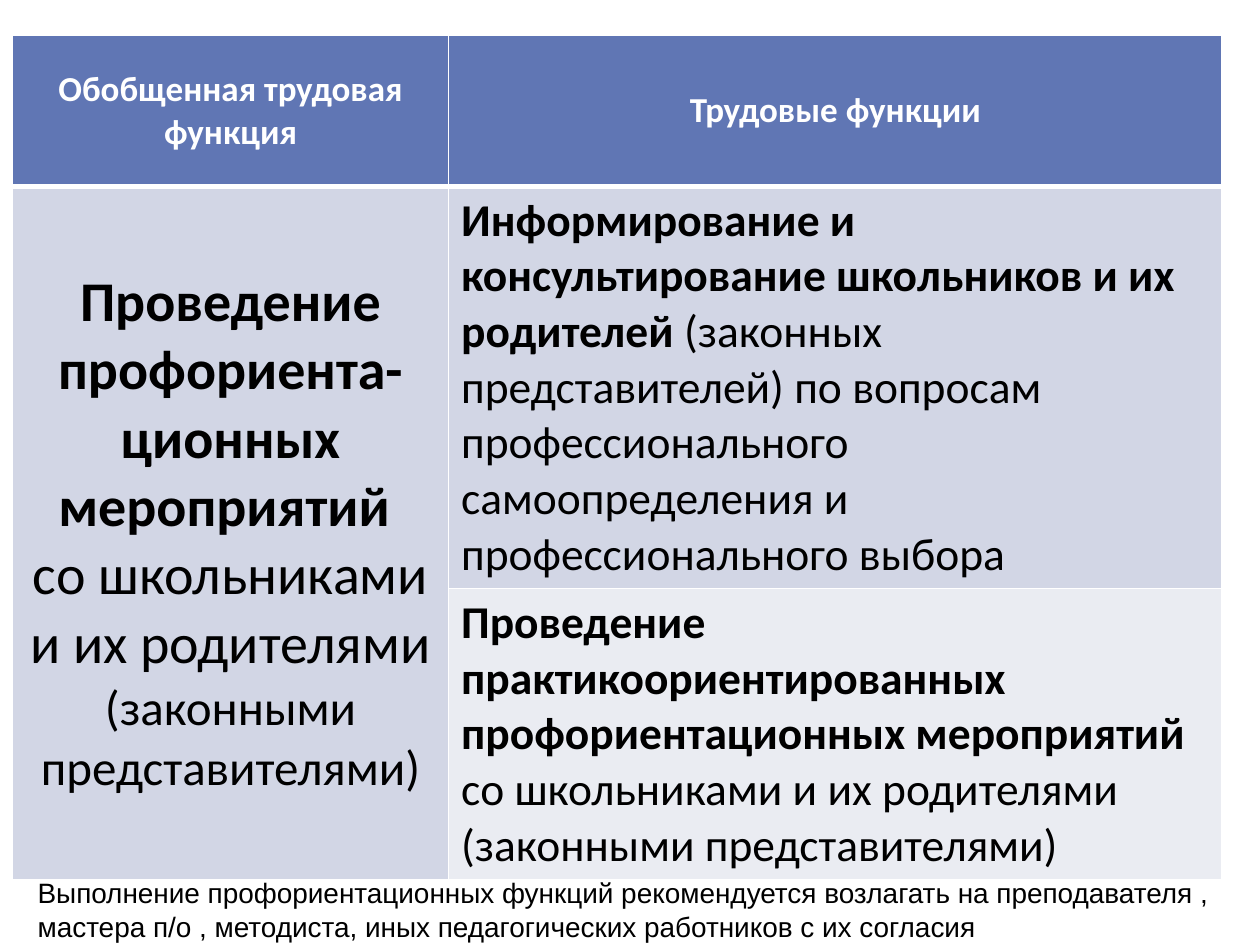
"""Build a slide with a table of labour functions and a note below it."""
from lxml import etree
from pptx import Presentation
from pptx.dml.color import RGBColor
from pptx.enum.text import MSO_ANCHOR, MSO_AUTO_SIZE, PP_ALIGN
from pptx.oxml.ns import qn
from pptx.util import Inches, Pt

CENTER, LEFT = PP_ALIGN.CENTER, PP_ALIGN.LEFT
MIDDLE, TOP = MSO_ANCHOR.MIDDLE, MSO_ANCHOR.TOP
GROW = MSO_AUTO_SIZE.SHAPE_TO_FIT_TEXT

COLORS = {"header": "6076B4", "band": "D2D6E5", "light": "EAECF2",
          "white": "FFFFFF", "black": "000000"}
COLUMNS = [3.46, 6.14]
ROWS = [1.2, 3.18, 2.3]
THIN, THICK = 1, 3

HEADERS = ["Обобщенная трудовая функция", "Трудовые функции"]
GENERAL_FUNCTION = [
    [("Проведение профориента-ционных мероприятий ", 32, True)],
    [("со школьниками и их родителями ", 32, False),
     ("(законными представителями)", 28, False)],
]
FUNCTIONS = [
    [[("Информирование и консультирование школьников и их родителей", 26, True),
      (" (законных представителей) по вопросам профессионального "
       "самоопределения и профессионального выбора", 26, False)]],
    [[("Проведение практикоориентированных профориентационных мероприятий ", 26, True),
      ("со школьниками и их родителями (законными представителями)", 26, False)]],
]
NOTE = [[("Выполнение профориентационных функций рекомендуется возлагать на "
          "преподавателя , мастера п/о , методиста, иных педагогических "
          "работников с их согласия", 16, False)]]


def write(frame, paragraphs, color, align=LEFT, font="Calibri"):
    for index, spans in enumerate(paragraphs):
        para = frame.paragraphs[0] if index == 0 else frame.add_paragraph()
        para.alignment = align
        for text, size, bold in spans:
            span = para.add_run()
            span.text = text
            span.font.name = font
            span.font.size = Pt(size)
            span.font.bold = bold
            span.font.color.rgb = RGBColor.from_string(COLORS[color])


def set_borders(cell, top, bottom):
    properties = cell._tc.get_or_add_tcPr()
    widths = {"a:lnL": THIN, "a:lnR": THIN, "a:lnT": top, "a:lnB": bottom}
    for index, (tag, width) in enumerate(widths.items()):
        line = etree.Element(qn(tag), w=str(Pt(width)))
        fill = etree.SubElement(line, qn("a:solidFill"))
        etree.SubElement(fill, qn("a:srgbClr"), val=COLORS["white"])
        properties.insert(index, line)


def style_cell(cell, fill, row):
    cell.fill.solid()
    cell.fill.fore_color.rgb = RGBColor.from_string(COLORS[fill])
    set_borders(cell, THICK if row == 1 else THIN, THICK if row == 0 else THIN)


def add_functions_table(page):
    table = page.shapes.add_table(
        len(ROWS), len(COLUMNS), Inches(0.1), Inches(0.28),
        Inches(sum(COLUMNS)), Inches(sum(ROWS))).table
    table.horz_banding = False
    for column, width in zip(table.columns, COLUMNS):
        column.width = Inches(width)
    for row, height in zip(table.rows, ROWS):
        row.height = Inches(height)

    for row, fill in enumerate(["header", "band", "light"]):
        for column in range(len(COLUMNS)):
            shade = "band" if row and column == 0 else fill
            style_cell(table.cell(row, column), shade, row)

    for column, title in enumerate(HEADERS):
        cell = table.cell(0, column)
        cell.vertical_anchor = MIDDLE
        write(cell.text_frame, [[(title, 20, True)]], "white", CENTER)

    general = table.cell(1, 0)
    general.merge(table.cell(2, 0))
    general.vertical_anchor = MIDDLE
    write(general.text_frame, GENERAL_FUNCTION, "black", CENTER)

    for row, paragraphs in enumerate(FUNCTIONS, start=1):
        cell = table.cell(row, 1)
        cell.vertical_anchor = TOP
        write(cell.text_frame, paragraphs, "black")


def add_note(page):
    box = page.shapes.add_textbox(Inches(0.2), Inches(6.9), Inches(9.61), Inches(0.64))
    box.text_frame.word_wrap = True
    box.text_frame.auto_size = GROW
    write(box.text_frame, NOTE, "black", font="Arial")


def main():
    deck = Presentation()
    deck.slide_width, deck.slide_height = Inches(10), Inches(7.5)
    page = deck.slides.add_slide(deck.slide_layouts[6])
    add_functions_table(page)
    add_note(page)
    deck.save("out.pptx")


if __name__ == "__main__":
    main()
